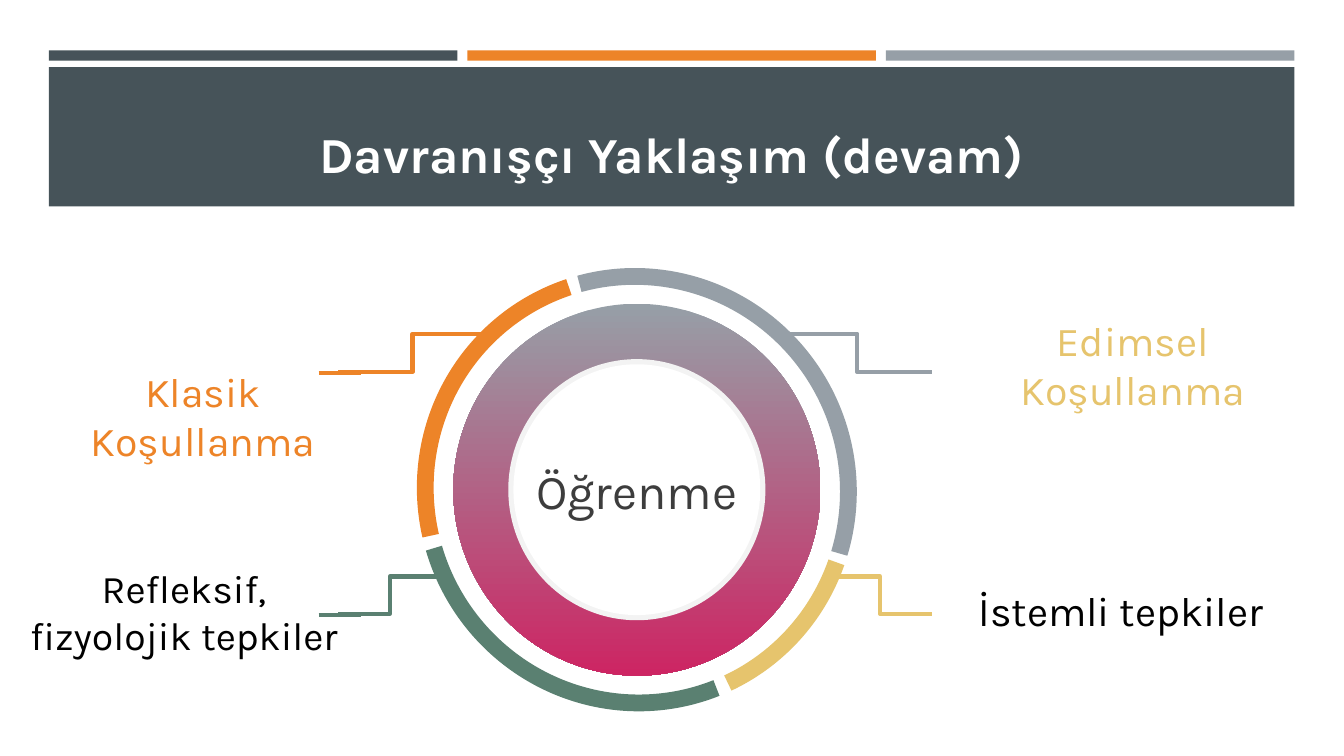
"""Builds a slide on the behaviourist approach to learning."""
from lxml import etree
from pptx import Presentation
from pptx import util as u
from pptx.dml.color import RGBColor
from pptx.enum import shapes, text
from pptx.oxml.ns import qn

SLATE = RGBColor(0x46, 0x53, 0x59)
ORANGE = RGBColor(0xED, 0x84, 0x28)
GREY = RGBColor(0x96, 0x9F, 0xA7)
GREEN = RGBColor(0x5A, 0x80, 0x71)
YELLOW = RGBColor(0xE6, 0xC4, 0x6D)
PINK = RGBColor(0xCD, 0x25, 0x63)
PALE = RGBColor(0xF3, 0xF3, 0xF3)
WHITE = RGBColor(0xFF, 0xFF, 0xFF)
CHARCOAL = RGBColor(0x3D, 0x3D, 0x3D)
BLACK = RGBColor(0x00, 0x00, 0x00)
FONT = "Karla"


def add_text(slide, words, left, top, width, height, size, colour, bold=False):
    """Add a centred text box, measured in centimetres."""
    box = slide.shapes.add_textbox(u.Cm(left), u.Cm(top), u.Cm(width), u.Cm(height))
    frame = box.text_frame
    frame.word_wrap = True
    frame.vertical_anchor = text.MSO_ANCHOR.MIDDLE
    frame.margin_left = frame.margin_right = u.Cm(0.34)
    frame.margin_top = frame.margin_bottom = u.Cm(0.34)
    paragraph = frame.paragraphs[0]
    paragraph.alignment = text.PP_ALIGN.CENTER
    run = paragraph.add_run()
    run.text = words
    run.font.name = FONT
    run.font.size = u.Pt(size)
    run.font.bold = bold
    run.font.color.rgb = colour


def add_preset(slide, kind, left, top, width, height, fill=None):
    """Add a preset shape without shadow or outline."""
    shape = slide.shapes.add_shape(kind, u.Cm(left), u.Cm(top), u.Cm(width), u.Cm(height))
    shape.shadow.inherit = False
    shape.line.fill.background()
    if fill is None:
        shape.fill.background()
    else:
        shape.fill.solid()
        shape.fill.fore_color.rgb = fill
    return shape


def add_line(slide, kind, start, end, colour):
    """Add a straight or bent connector between two points."""
    points = [u.Cm(value) for value in (*start, *end)]
    connector = slide.shapes.add_connector(kind, *points)
    connector.line.color.rgb = colour
    connector.line.width = u.Pt(3)
    etree.SubElement(connector.element.spPr, qn("a:effectLst"))


def add_header(slide, left, top, width, title):
    """Draw three coloured bars above the title band."""
    gap = 0.25
    bar_width = (width - 2 * gap) / 3
    for index, colour in enumerate((SLATE, ORANGE, GREY)):
        add_preset(slide, shapes.MSO_SHAPE.RECTANGLE, left + index * (bar_width + gap),
                   top, bar_width, 0.26, colour)
    add_preset(slide, shapes.MSO_SHAPE.RECTANGLE, left, top + 0.42, width, 3.51, SLATE)
    add_text(slide, title, left, top + 2.05, width, 1.09, 36, WHITE, bold=True)


def add_wheel(slide, centre_x, centre_y, caption):
    """Draw the gradient disc, its hub, the caption and the ring of arcs."""
    def centred(kind, width, height, fill=None):
        """Add a shape around the centre of the wheel."""
        return add_preset(slide, kind, centre_x - width / 2, centre_y - height / 2,
                          width, height, fill)

    disc = centred(shapes.MSO_SHAPE.OVAL, 9.25, 9.37)
    disc.fill.gradient()
    disc.fill.gradient_angle = 270
    for stop, colour in zip(disc.fill.gradient_stops, (GREY, PINK)):
        stop.color.rgb = colour
    centred(shapes.MSO_SHAPE.OVAL, 6.48, 6.58, PALE)
    centred(shapes.MSO_SHAPE.OVAL, 6.22, 6.32, WHITE)
    add_text(slide, caption, centre_x - 3.18, centre_y - 0.63, 6.35, 1.27, 34.7, CHARCOAL)

    arcs = ((GREEN, 55.93, 113.41), (YELLOW, 27.06, 53.94),
            (GREY, 167.71, 25.55), (ORANGE, 115.51, 165.93))
    for colour, start, end in arcs:
        arc = centred(shapes.MSO_SHAPE.ARC, 10.64, 10.77)
        arc.adjustments[0] = start
        arc.adjustments[1] = end
        arc.rotation = 334.9
        arc.line.color.rgb = colour
        arc.line.width = u.Pt(12)


def add_branches(slide, centre_x, centre_y):
    """Draw the bent lines that lead from the wheel to the labels."""
    rows = ((-2.97, -3.93, 3.73, ORANGE, GREY), (3.13, 2.19, 4.88, GREEN, YELLOW))
    for outer_y, inner_y, inner_x, left_colour, right_colour in rows:
        for side, colour in ((-1, left_colour), (1, right_colour)):
            add_line(slide, shapes.MSO_CONNECTOR.ELBOW,
                     (centre_x + side * 7.48, centre_y + outer_y),
                     (centre_x + side * inner_x, centre_y + inner_y), colour)
        add_line(slide, shapes.MSO_CONNECTOR.STRAIGHT,
                 (centre_x - 7.97, centre_y + outer_y + 0.03),
                 (centre_x - 6.91, centre_y + outer_y + 0.03), left_colour)


def add_labels(slide):
    """Place the label at the end of each branch."""
    labels = (
        ("Klasik Koşullanma", 0.86, 9.83, 8.51, 29.3, ORANGE),
        ("Edimsel Koşullanma", 23.44, 8.56, 10.21, 29.3, YELLOW),
        ("Refleksif, fizyolojik tepkiler", 0.38, 14.76, 8.51, 28, BLACK),
        ("İstemli tepkiler", 23.14, 14.73, 10.21, 29.3, BLACK),
    )
    for words, left, top, width, size, colour in labels:
        add_text(slide, words, left, top, width, 1.27, size, colour)


def main():
    """Build and save the presentation."""
    presentation = Presentation()
    presentation.slide_width = u.Cm(33.87)
    presentation.slide_height = u.Cm(19.05)
    slide = presentation.slides.add_slide(presentation.slide_layouts[6])
    add_header(slide, 1.23, 1.27, 31.39, "Davranışçı Yaklaşım (devam)")
    add_branches(slide, 16, 12.34)
    add_wheel(slide, 16.05, 12.34, "Öğrenme")
    add_labels(slide)
    presentation.save("out.pptx")


if __name__ == "__main__":
    main()
